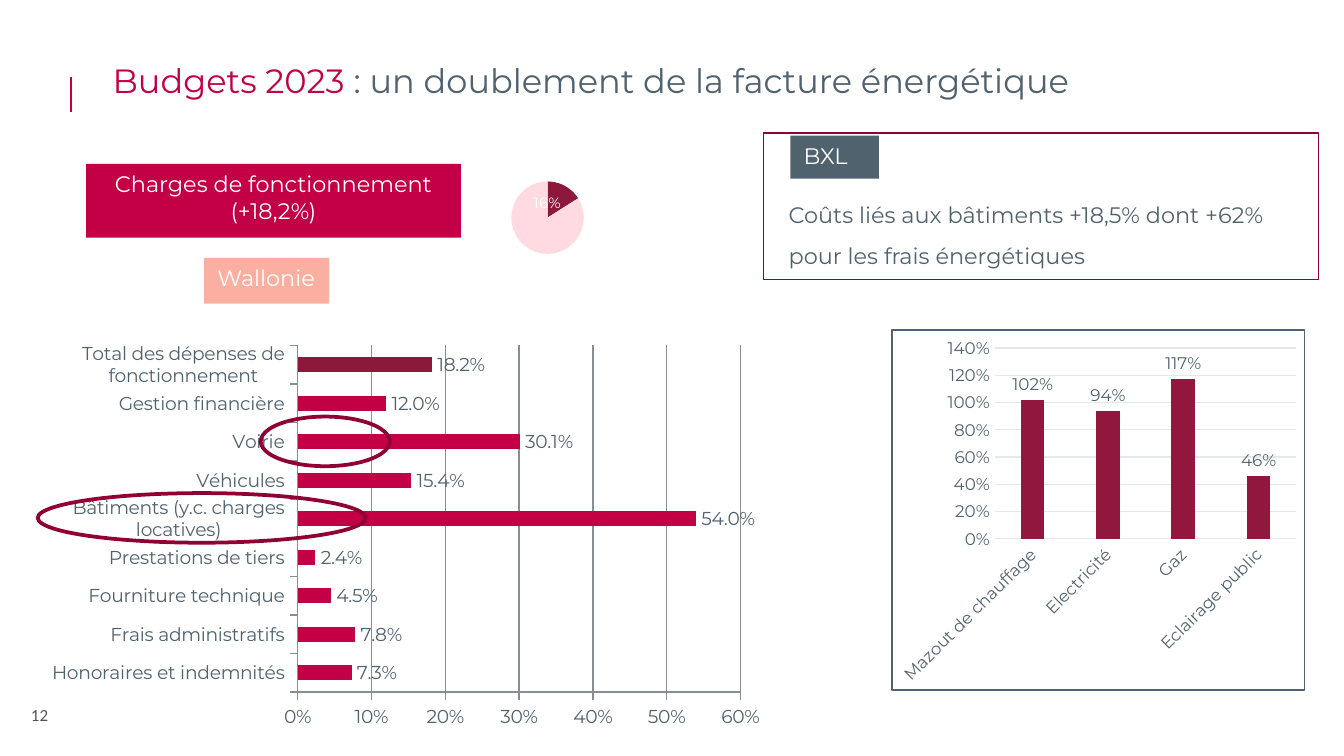
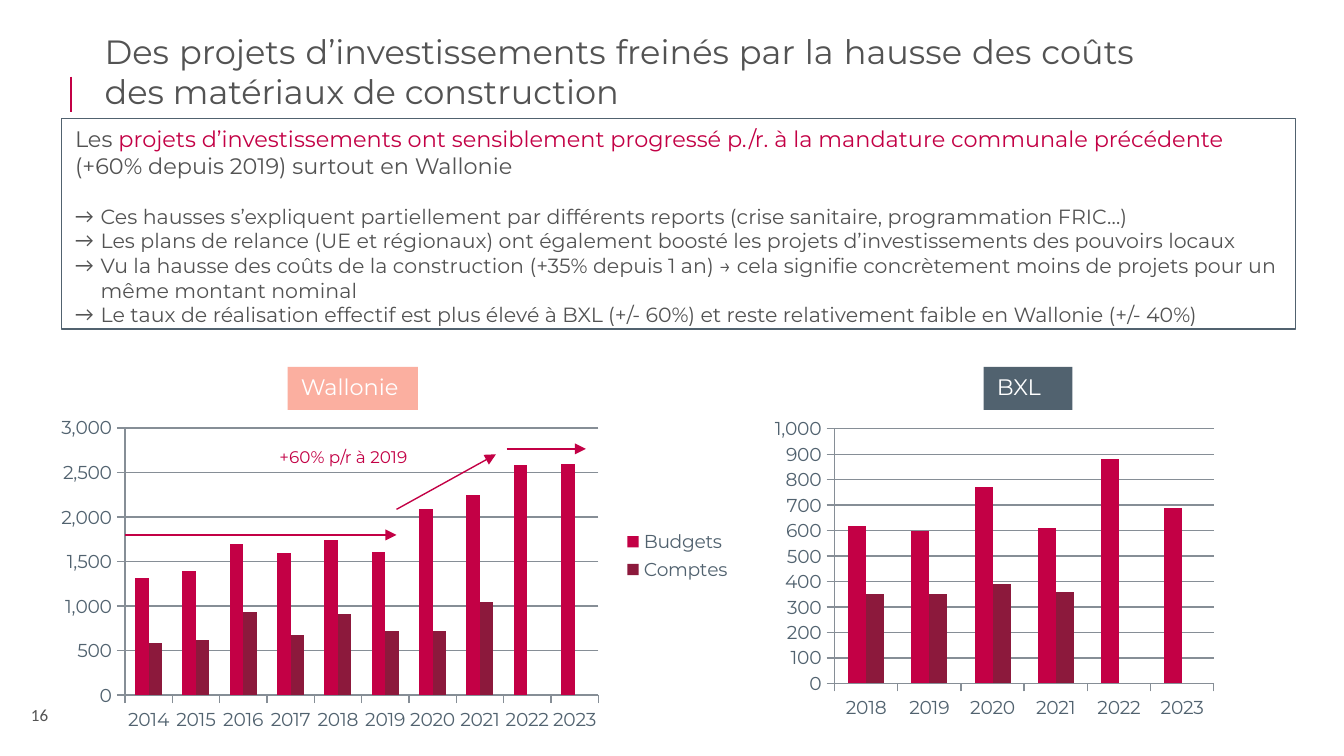
from dataclasses import dataclass
from typing import NamedTuple

from lxml.etree import SubElement
from pptx import Presentation
from pptx.chart.data import CategoryChartData
from pptx.dml.color import RGBColor
from pptx.enum.chart import XL_CHART_TYPE, XL_LABEL_POSITION, XL_LEGEND_POSITION
from pptx.enum.chart import XL_TICK_LABEL_POSITION, XL_TICK_MARK
from pptx.enum.shapes import MSO_CONNECTOR, MSO_SHAPE
from pptx.enum.text import MSO_ANCHOR, PP_ALIGN
from pptx.oxml import parse_xml
from pptx.oxml.ns import nsdecls, qn
from pptx.util import Pt


@dataclass(frozen=True)
class Theme:
    """Colours, fonts and type sizes of the deck."""
    crimson: str = "C30045"
    burgundy: str = "8C193C"
    wine: str = "91173F"
    garnet: str = "900033"
    salmon: str = "FBAFA0"
    blush: str = "FFDAE1"
    slate: str = "51626F"
    gray: str = "535353"
    axis: str = "868E96"
    pale: str = "E3E8EB"
    white: str = "FFFFFF"
    font: str = "Montserrat"
    number_font: str = "Calibri"
    title: float = 18
    body: float = 12
    bullet: float = 11
    chart: float = 10
    small: float = 9
    share: float = 8
    number: float = 9.1


class Box(NamedTuple):
    """A rectangle in points."""
    left: float
    top: float
    width: float
    height: float

    def inside(self, left, top, width, height):
        """Return a box placed relative to this one."""
        return Box(self.left + left, self.top + top, width, height)

    def lengths(self):
        """Return the four lengths for python-pptx."""
        return [Pt(value) for value in self]


THEME = Theme()


def rgb(color):
    """Turn a hex string into a colour."""
    return RGBColor.from_string(color)


def style_font(font, size, color, name=THEME.font):
    """Set face, size and colour of a font."""
    font.name, font.size = name, Pt(size)
    font.color.rgb = rgb(color)


def add_spans(para, *spans, name=THEME.font):
    """Add runs given as (text, size, colour)."""
    for text, size, color in spans:
        span = para.add_run()
        span.text = text
        style_font(span.font, size, color, name)


def add_text(page, box, *spans, align=PP_ALIGN.LEFT, anchor=MSO_ANCHOR.TOP, spacing=None, name=THEME.font):
    """Add a wrapping text box with one paragraph."""
    frame = page.shapes.add_textbox(*box.lengths()).text_frame
    frame.word_wrap, frame.vertical_anchor = True, anchor
    para = frame.paragraphs[0]
    para.alignment, para.line_spacing = align, spacing
    add_spans(para, *spans, name=name)
    return frame


def add_panel(page, box, fill=None, line=None, width=1, kind=MSO_SHAPE.RECTANGLE):
    """Add a flat shape and return its text frame."""
    panel = page.shapes.add_shape(kind, *box.lengths())
    panel.shadow.inherit = False
    if fill:
        panel.fill.solid()
        panel.fill.fore_color.rgb = rgb(fill)
    else:
        panel.fill.background()
    if line:
        panel.line.color.rgb = rgb(line)
        panel.line.width = Pt(width)
    else:
        panel.line.fill.background()
    frame = panel.text_frame
    frame.word_wrap, frame.vertical_anchor = True, MSO_ANCHOR.TOP
    frame.paragraphs[0].alignment = PP_ALIGN.LEFT
    return frame


def add_tag(page, box, text, fill):
    """Add a filled region label."""
    frame = add_panel(page, box, fill)
    add_spans(frame.paragraphs[0], (text, THEME.body, THEME.white))


def add_line(page, box, start, end, head="none"):
    """Add a thin crimson line between two points of a box."""
    ends = [Pt(value) for x, y in (start, end) for value in (box.left + x, box.top + y)]
    line = page.shapes.add_connector(MSO_CONNECTOR.STRAIGHT, *ends)
    line.line.color.rgb = rgb(THEME.crimson)
    line.line.width = Pt(0.75)
    SubElement(line.line._get_or_add_ln(), qn("a:tailEnd"), type=head)
    SubElement(line._element.spPr, qn("a:effectLst"))
    line._element.remove(line._element.find(qn("p:style")))


def add_chart(page, box, kind, categories, series, plot, size=THEME.chart, border=None):
    """Add a chart whose inner plot takes the given fractions of its box."""
    data = CategoryChartData()
    data.categories = categories
    for name, values, _ in series:
        data.add_series(name, values)
    chart = page.shapes.add_chart(kind, *box.lengths(), data).chart
    chart.has_title = chart.has_legend = False
    style_font(chart.font, size, THEME.slate)
    paint = f'<a:solidFill><a:srgbClr val="{border}"/></a:solidFill>' if border else "<a:noFill/>"
    root = chart._chartSpace.chart
    root.addnext(parse_xml(
        f'<c:spPr {nsdecls("c", "a")}><a:noFill/><a:ln w="9525">{paint}</a:ln></c:spPr>'))
    area = root.plotArea
    for layout in area.findall(qn("c:layout")):
        area.remove(layout)
    places = "".join(f'<c:{key} val="{value}"/>' for key, value in zip("xywh", plot))
    area.insert(0, parse_xml(
        f'<c:layout {nsdecls("c")}><c:manualLayout><c:layoutTarget val="inner"/>'
        f'<c:xMode val="edge"/><c:yMode val="edge"/>{places}</c:manualLayout></c:layout>'))
    return chart


def add_bars(page, box, categories, series, plot, top, step, form, kind=XL_CHART_TYPE.COLUMN_CLUSTERED,
             gap=150, overlap=0, grid=THEME.axis, **style):
    """Add a bar or column chart with a ruled value axis."""
    chart = add_chart(page, box, kind, categories, series, plot, **style)
    bars = chart.plots[0]
    bars.vary_by_categories = False
    bars.gap_width, bars.overlap = gap, overlap
    for drawn, (_, _, color) in zip(bars.series, series):
        drawn.invert_if_negative = False
        drawn.format.fill.solid()
        drawn.format.fill.fore_color.rgb = rgb(color)
    scale = chart.value_axis
    scale.minimum_scale, scale.maximum_scale, scale.major_unit = 0, top, step
    scale.has_major_gridlines = True
    scale.tick_labels.number_format = form
    scale.tick_labels.number_format_is_linked = False
    for line in (scale.format.line, scale.major_gridlines.format.line, chart.category_axis.format.line):
        line.color.rgb = rgb(grid)
        line.width = Pt(0.75)
    return chart


def add_values(series, form, size):
    """Show values at the end of each bar."""
    labels = series.data_labels
    labels.show_value = True
    labels.position = XL_LABEL_POSITION.OUTSIDE_END
    labels.number_format, labels.number_format_is_linked = form, False
    style_font(labels.font, size, THEME.slate)


def add_frame(deck, number):
    """Add a page with the margin rule and page number."""
    page = deck.slides.add_slide(deck.slide_layouts[6])
    add_line(page, Box(38, 41, 0, 18.8), (0, 0), (0, 18.8))
    frame = add_text(page, Box(8.6, 374.4, 25.2, 16.6), (number, THEME.number, THEME.gray),
                     align=PP_ALIGN.CENTER, name=THEME.number_font)
    frame.margin_left = frame.margin_right = frame.margin_top = frame.margin_bottom = Pt(2.9)
    return page


def budget_pie(page, box):
    """Draw the share of operating costs."""
    chart = add_chart(page, box, XL_CHART_TYPE.PIE, ["1", "2"], [("Series 1", (16, 84), None)],
                      (0.29, 0.32, 0.33, 0.54))
    share = chart.plots[0].series[0]
    for index, color in enumerate((THEME.burgundy, THEME.blush)):
        fill = share.points[index].format.fill
        fill.solid()
        fill.fore_color.rgb = rgb(color)
    labels = share.data_labels
    labels.show_percentage, labels.show_value = True, False
    labels.number_format, labels.number_format_is_linked = "0%", False
    labels.position = XL_LABEL_POSITION.INSIDE_END
    style_font(labels.font, THEME.share, THEME.white)
    labels._element.find(qn("c:txPr")).find(qn("a:bodyPr")).set("wrap", "none")
    labels._element.insert(0, parse_xml(
        f'<c:dLbl {nsdecls("c")}><c:idx val="1"/><c:delete val="1"/></c:dLbl>'))


def budget_wallonia(page, box):
    """Draw the operating costs of Wallonia."""
    costs = {
        "Honoraires et indemnités": 0.073, "Frais administratifs": 0.078,
        "Fourniture technique": 0.045, "Prestations de tiers": 0.024,
        "Bâtiments (y.c. charges locatives)": 0.54, "Véhicules": 0.154, "Voirie": 0.301,
        "Gestion financière": 0.12, "Total des dépenses de fonctionnement": 0.182,
    }
    chart = add_bars(page, box.inside(1, 104.4, 395.3, 216), list(costs),
                     [("Series 1", list(costs.values()), THEME.crimson)], (0.35, 0.03, 0.6, 0.86),
                     0.6, 0.1, "0%", kind=XL_CHART_TYPE.BAR_CLUSTERED)
    chart.category_axis.tick_label_position = XL_TICK_LABEL_POSITION.LOW
    bars = chart.plots[0].series[0]
    add_values(bars, "0.0%", THEME.chart)
    total = bars.points[len(costs) - 1].format.fill
    total.solid()
    total.fore_color.rgb = rgb(THEME.burgundy)
    add_tag(page, box.inside(89.2, 64, 67, 24.5), "Wallonie", THEME.salmon)
    heading = add_panel(page, box.inside(25.9, 13.6, 200.9, 39.6), THEME.crimson)
    for para, text in zip((heading.paragraphs[0], heading.add_paragraph()),
                          ("Charges de fonctionnement", "(+18,2%)")):
        para.alignment = PP_ALIGN.CENTER
        add_spans(para, (text, THEME.body, THEME.white))
    budget_pie(page, box.inside(218.8, 0, 119.5, 72))
    for ring in (box.inside(0, 190, 175.7, 26.6), box.inside(119.5, 149, 69.1, 26.6)):
        add_panel(page, ring, line=THEME.garnet, width=2, kind=MSO_SHAPE.OVAL)


def budget_brussels(page, box):
    """Draw the building and energy costs of Brussels."""
    chart = add_bars(page, box.inside(68.4, 105.1, 221.8, 193.7),
                     ["Mazout de chauffage", "Electricité", "Gaz", "Eclairage public"],
                     [("Series 1", (1.02, 0.94, 1.17, 0.46), THEME.wine)], (0.25, 0.05, 0.73, 0.53),
                     1.4, 0.2, "0%", gap=219, overlap=-27, grid=THEME.pale,
                     size=THEME.small, border=THEME.slate)
    chart.value_axis.format.line.fill.background()
    for axis in (chart.category_axis, chart.value_axis):
        axis.major_tick_mark = XL_TICK_MARK.NONE
    names = chart.category_axis
    style_font(names.tick_labels.font, THEME.small, THEME.slate)
    names._element.find(qn("c:txPr")).find(qn("a:bodyPr")).set("rot", "-2700000")
    add_values(chart.plots[0].series[0], "0%", THEME.small)
    add_tag(page, box.inside(14.4, 1.4, 47.5, 23), "BXL", THEME.slate)
    add_text(page, box.inside(6.4, 25.9, 279.4, 33.8),
             ("Coûts liés aux bâtiments +18,5% dont +62% pour les frais énergétiques",
              THEME.body, THEME.slate), spacing=1.5)
    add_panel(page, box.inside(0, 0, 297.4, 78.5), line=THEME.garnet)


def projects_summary(page, box):
    """Write the framed findings on investment projects."""
    frame = add_panel(page, box, line=THEME.slate, width=0.75)
    add_spans(frame.paragraphs[0], ("Les ", THEME.body, THEME.gray),
              ("projets d’investissements ont sensiblement progressé p./r. à la mandature communale précédente ",
               THEME.body, THEME.crimson),
              ("(+60% depuis 2019) surtout en Wallonie", THEME.body, THEME.gray))
    findings = (
        "Ces hausses s’expliquent partiellement par différents reports (crise sanitaire, programmation FRIC…)",
        "Les plans de relance (UE et régionaux) ont également boosté les projets d’investissements des pouvoirs locaux",
        "Vu la hausse des coûts de la construction (+35% depuis 1 an) → cela signifie concrètement moins de projets "
        "pour un même montant nominal",
        "Le taux de réalisation effectif est plus élevé à BXL (+/- 60%) et reste relativement faible en Wallonie "
        "(+/- 40%)",
    )
    for index, text in enumerate(findings):
        para = frame.add_paragraph()
        para.alignment = PP_ALIGN.LEFT
        para.space_before = Pt(0 if index else 13.4)
        layout = para._p.get_or_add_pPr()
        layout.set("marL", str(Pt(13.7)))
        layout.set("indent", str(-Pt(13.7)))
        SubElement(layout, qn("a:buFont"), typeface=THEME.number_font)
        SubElement(layout, qn("a:buChar"), char="→")
        add_spans(para, (text, THEME.bullet, THEME.gray))


def projects_wallonia(page, box):
    """Draw budgets and accounts of Wallonia with their trend."""
    series = [("Budgets", (1310, 1390, 1700, 1600, 1740, 1610, 2090, 2250, 2580, 2600), THEME.crimson),
              ("Comptes", (580, 620, 930, 680, 910, 720, 720, 1040, None, None), THEME.burgundy)]
    chart = add_bars(page, box, [str(year) for year in range(2014, 2024)], series,
                     (0.11, 0.18, 0.68, 0.67), 3000, 500, "#,##0")
    chart.has_legend = True
    chart.legend.position = XL_LEGEND_POSITION.RIGHT
    chart.legend.include_in_layout = False
    for start, end in (((186.5, 82.1), (239.8, 52.6)), ((245.5, 49.7), (288, 49.7)),
                       ((41.1, 95.8), (186.5, 95.8))):
        add_line(page, box, start, end, head="triangle")
    add_text(page, box.inside(116.7, 39.6, 92.9, 26.6),
             ("+60% p/r à 2019", THEME.small, THEME.crimson), spacing=1.5)
    add_tag(page, box.inside(128.2, 5.8, 69.8, 23), "Wallonie", THEME.salmon)


def projects_brussels(page, box):
    """Draw budgets and accounts of Brussels."""
    series = [("Series 1", (620, 600, 770, 610, 880, 690), THEME.crimson),
              ("Series 2", (350, 350, 390, 360, None, None), THEME.burgundy)]
    add_bars(page, box.inside(0, 28.8, 244.8, 168.5), [str(year) for year in range(2018, 2024)], series,
             (0.15, 0.06, 0.83, 0.81), 1000, 100, "#,##0")
    add_tag(page, box.inside(116.6, 5.8, 47.5, 23), "BXL", THEME.slate)


def main():
    """Build and save the deck."""
    deck = Presentation()
    deck.slide_width, deck.slide_height = Pt(720), Pt(405)

    budget = add_frame(deck, "12")
    add_text(budget, Box(53.3, 28.8, 640.8, 39.6), ("Budgets 2023 ", THEME.title, THEME.crimson),
             (": un doublement de la facture énergétique", THEME.title, THEME.slate))
    budget_wallonia(budget, Box(20.2, 74.2, 395.3, 320.4))
    budget_brussels(budget, Box(409, 71.3, 297.4, 298.8))

    projects = add_frame(deck, "16")
    add_text(projects, Box(49, 25.9, 565.9, 24.5),
             ("Des projets d’investissements freinés par la hausse des coûts des matériaux de construction",
              THEME.title, THEME.gray), align=PP_ALIGN.JUSTIFY, anchor=MSO_ANCHOR.MIDDLE)
    projects_summary(projects, Box(33.1, 63.4, 661, 113))
    projects_wallonia(projects, Box(25.9, 190.8, 373, 213.8))
    projects_brussels(projects, Box(410.4, 190.8, 244.8, 197.3))
    deck.save("out.pptx")


if __name__ == "__main__":
    main()
